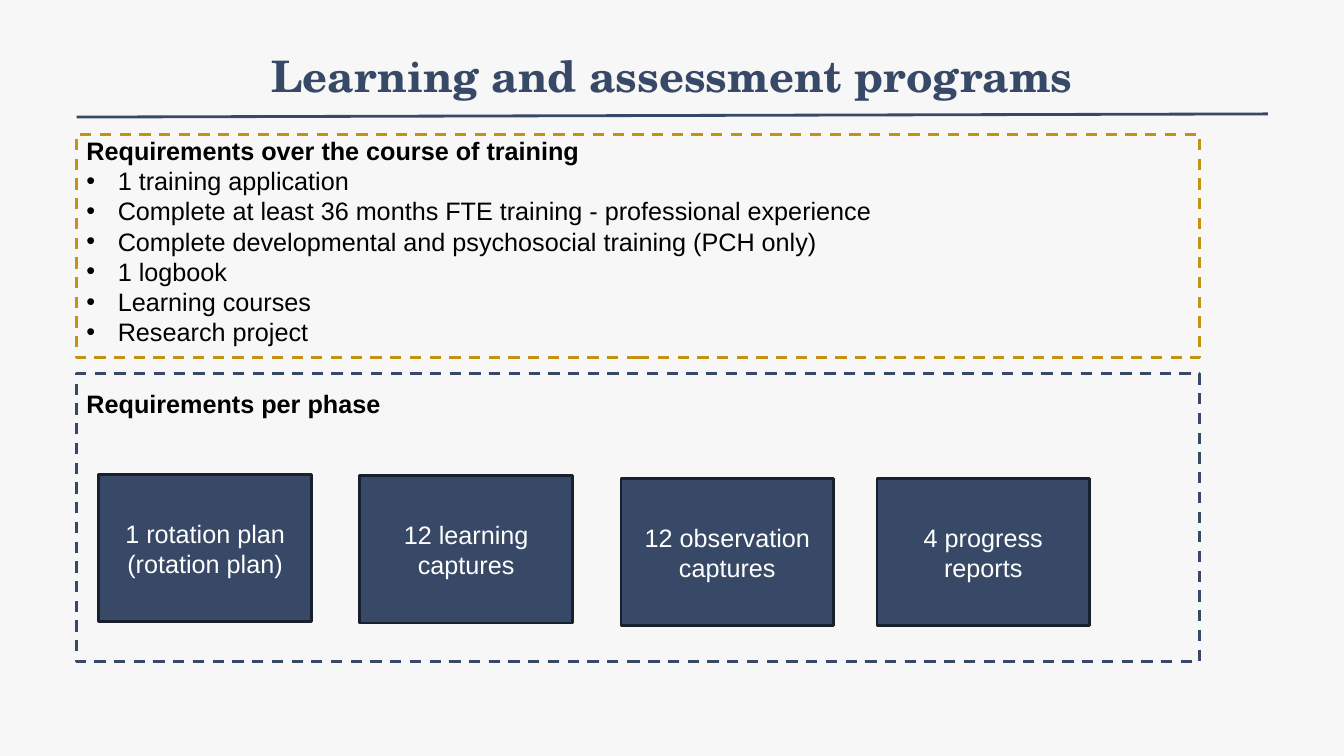
from lxml import etree
from pptx import Presentation
from pptx.dml.color import RGBColor
from pptx.enum.dml import MSO_LINE
from pptx.enum.shapes import MSO_CONNECTOR, MSO_SHAPE
from pptx.enum.text import MSO_ANCHOR, MSO_AUTO_SIZE, PP_ALIGN
from pptx.oxml.ns import qn
from pptx.util import Cm, Pt

RECTANGLE, STRAIGHT = MSO_SHAPE.RECTANGLE, MSO_CONNECTOR.STRAIGHT
DASH = MSO_LINE.DASH
LEFT, CENTER = PP_ALIGN.LEFT, PP_ALIGN.CENTER
TOP, MIDDLE = MSO_ANCHOR.TOP, MSO_ANCHOR.MIDDLE
GROW = MSO_AUTO_SIZE.SHAPE_TO_FIT_TEXT

COLORS = {
    "page": "F7F7F7",
    "navy": "384967",
    "edge": "19202D",
    "gold": "C69214",
    "black": "000000",
    "white": "FFFFFF",
}
BODY = {"name": "Arial", "size": Pt(18), "bold": False}
HEADING = {**BODY, "bold": True}
TITLE = {"name": "TeX Gyre Schola", "size": Pt(31), "bold": True}

TRAINING_ITEMS = [
    "1 training application",
    "Complete at least 36 months FTE training - professional experience",
    "Complete developmental and psychosocial training (PCH only)",
    "1 logbook",
    "Learning courses",
    "Research project",
]
# Wording, then offset from the panel's corner in cm
PHASE_CARDS = [
    ("1 rotation plan (rotation plan)", 0.56, 2.54),
    ("12 learning captures", 7.14, 2.57),
    ("12 observation captures", 13.72, 2.64),
    ("4 progress reports", 20.17, 2.64),
]
CARD_WIDTH, CARD_HEIGHT = 5.36, 3.71


def rgb(name):
    return RGBColor.from_string(COLORS[name])


def write(para, text, style, color, align=LEFT):
    para.alignment = align
    span = para.add_run()
    span.text = text
    for key, value in style.items():
        setattr(span.font, key, value)
    span.font.color.rgb = rgb(color)


def add_bullet(para, indent=Cm(0.79)):
    properties = para._p.get_or_add_pPr()
    properties.set("marL", str(indent))
    properties.set("indent", str(-indent))
    etree.SubElement(properties, qn("a:buFont"), typeface="Arial")
    etree.SubElement(properties, qn("a:buChar"), char="•")


def add_text_box(page, left, top, width, height, anchor=TOP):
    box = page.shapes.add_textbox(Cm(left), Cm(top), Cm(width), Cm(height))
    frame = box.text_frame
    frame.word_wrap = True
    frame.vertical_anchor = anchor
    return frame


def add_rectangle(page, left, top, width, height, line, fill=None, dash=None):
    shape = page.shapes.add_shape(
        RECTANGLE, Cm(left), Cm(top), Cm(width), Cm(height))
    shape.shadow.inherit = False
    if fill:
        shape.fill.solid()
        shape.fill.fore_color.rgb = rgb(fill)
    else:
        shape.fill.background()
    shape.line.color.rgb = rgb(line)
    shape.line.width = Pt(2)
    if dash:
        shape.line.dash_style = dash
    return shape


def add_title(page, left, top, width, height):
    frame = add_text_box(page, left, top, width, height, MIDDLE)
    frame.margin_left = frame.margin_right = Cm(0.18)
    frame.margin_top = frame.margin_bottom = Cm(0.1)
    write(frame.paragraphs[0], "Learning and assessment programs",
          TITLE, "navy", CENTER)


def add_title_rule(page, left, top, right, bottom):
    rule = page.shapes.add_connector(
        STRAIGHT, Cm(left), Cm(top), Cm(right), Cm(bottom))
    rule.line.color.rgb = rgb("navy")
    rule.line.width = Pt(2)
    etree.SubElement(rule._element.spPr, qn("a:effectLst"))


def add_training_panel(page, left, top, width, height):
    add_rectangle(page, left, top, width, height, "gold", dash=DASH)
    frame = add_text_box(page, left, top - 0.1, 25, height)
    frame.auto_size = GROW
    write(frame.paragraphs[0], "Requirements over the course of training",
          HEADING, "black")
    for item in TRAINING_ITEMS:
        para = frame.add_paragraph()
        add_bullet(para)
        write(para, item, BODY, "black")


def add_phase_panel(page, left, top, width, height):
    add_rectangle(page, left, top, width, height, "navy", dash=DASH)
    frame = add_text_box(page, left, top + 0.23, 16.94, 1.02)
    frame.auto_size = GROW
    write(frame.paragraphs[0], "Requirements per phase", HEADING, "black")
    for text, across, down in PHASE_CARDS:
        card = add_rectangle(page, left + across, top + down,
                             CARD_WIDTH, CARD_HEIGHT, "edge", fill="navy")
        card.text_frame.word_wrap = True
        card.text_frame.vertical_anchor = MIDDLE
        write(card.text_frame.paragraphs[0], text, BODY, "white", CENTER)


def main():
    deck = Presentation()
    deck.slide_width, deck.slide_height = Cm(33.87), Cm(19.05)
    page = deck.slides.add_slide(deck.slide_layouts[6])
    page.background.fill.solid()
    page.background.fill.fore_color.rgb = rgb("page")

    # Heading
    add_title(page, 4.22, 0.74, 25.43, 2.31)
    add_title_rule(page, 1.93, 2.95, 31.95, 2.87)

    # Requirement panels
    add_training_panel(page, 1.93, 3.38, 28.3, 5.64)
    add_phase_panel(page, 1.93, 9.42, 28.3, 7.26)

    deck.save("out.pptx")


if __name__ == "__main__":
    main()
